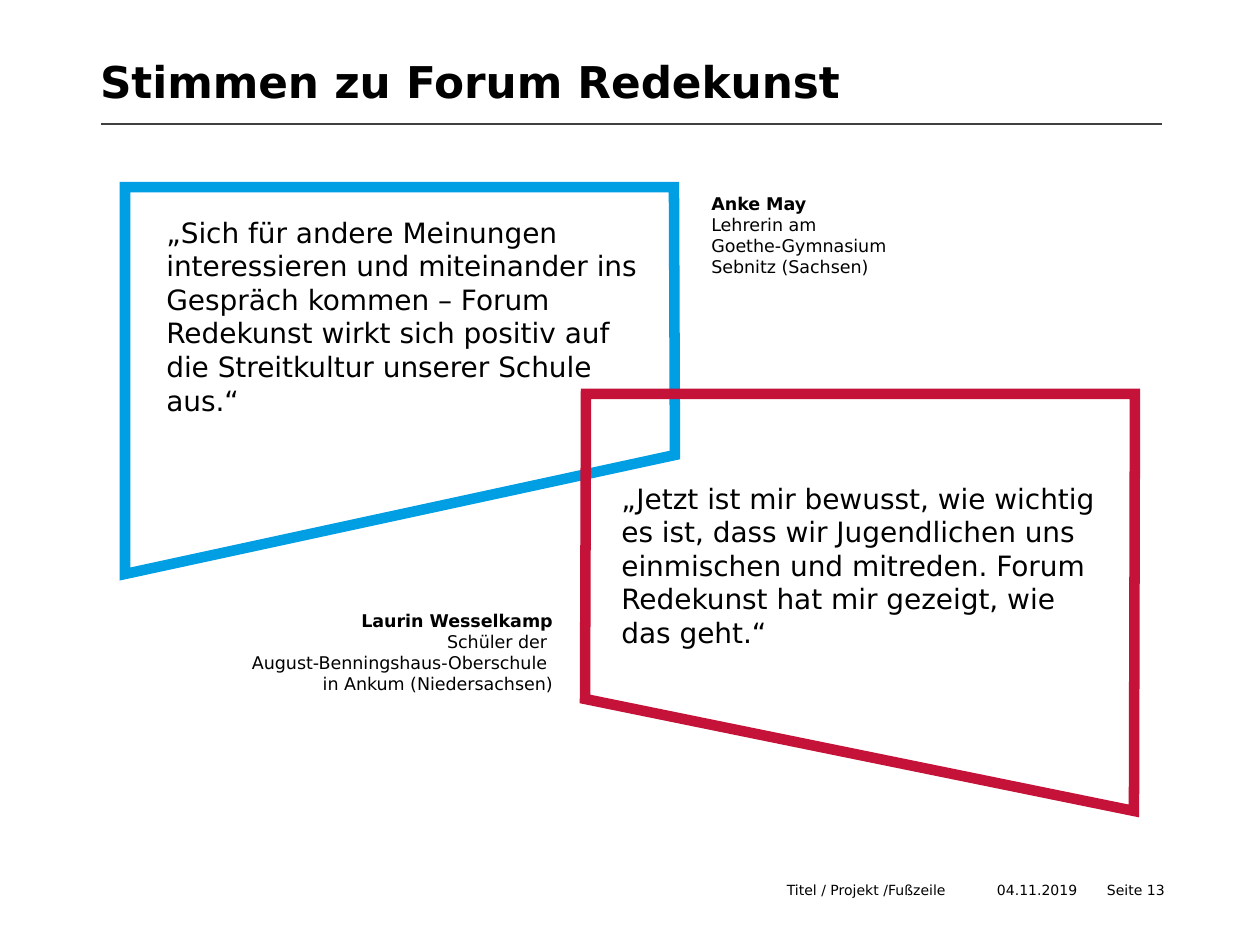
"""Build a slide with two quotations about Forum Redekunst in slanted frames."""
from lxml import etree
from pptx import Presentation
from pptx import util as u
from pptx.dml.color import RGBColor
from pptx.enum import shapes, text
from pptx.oxml.ns import qn

PX = u.Inches(1) / 126
FONT = "DejaVu Sans"
BLACK = RGBColor(0x00, 0x00, 0x00)
GREY = RGBColor(0x40, 0x40, 0x40)
BLUE = RGBColor(0x00, 0x9E, 0xE3)
RED = RGBColor(0xC4, 0x12, 0x39)
LEFT, RIGHT = text.PP_ALIGN.LEFT, text.PP_ALIGN.RIGHT

TITLE = "Stimmen zu Forum Redekunst"
TITLE_AREA = (100, 55, 1063, 79)
RULE = (101, 124, 1162, 124)

FRAMES = [
    (BLUE, [(125, 187), (674, 187), (675, 455), (125, 574)]),
    (RED, [(1135, 394), (586, 394), (585, 699), (1134, 811)]),
]
QUOTES = [
    ("„Sich für andere Meinungen interessieren und miteinander ins Gespräch "
     "kommen – Forum Redekunst wirkt sich positiv auf die Streitkultur "
     "unserer Schule aus.“", (154, 209, 507, 217)),
    ("„Jetzt ist mir bewusst, wie wichtig es ist, dass wir Jugendlichen uns "
     "einmischen und mitreden. Forum Redekunst hat mir gezeigt, wie das "
     "geht.“", (609, 475, 507, 183)),
]
SPEAKERS = [
    ("Laurin Wesselkamp",
     ["Schüler der ", "August-Benningshaus-Oberschule ", "in Ankum (Niedersachsen)"],
     (203, 604, 362, 97), RIGHT),
    ("Anke May",
     ["Lehrerin am ", "Goethe-Gymnasium", "Sebnitz (Sachsen)"],
     (699, 187, 350, 97), LEFT),
]
FOOTER = [
    ("Titel / Projekt /Fußzeile", (669, 882, 277, 50)),
    ("04.11.2019 ", (966, 882, 116, 50)),
    ("Seite 13", (1076, 882, 89, 50)),
]


def emu(lengths):
    return [round(length * PX) for length in lengths]


def clear_insets(frame):
    frame.margin_left = frame.margin_right = 0
    frame.margin_top = frame.margin_bottom = 0


def style(para, size, align=LEFT):
    para.alignment = align
    para.font.name = FONT
    para.font.size = u.Pt(size)
    para.font.color.rgb = BLACK


def add_text(slide, area, size, align=LEFT):
    box = slide.shapes.add_textbox(*emu(area))
    box.text_frame.word_wrap = True
    para = box.text_frame.paragraphs[0]
    style(para, size, align)
    return box.text_frame, para


def add_title(slide):
    title = slide.shapes.title
    title.left, title.top, title.width, title.height = emu(TITLE_AREA)
    frame = title.text_frame
    frame.text = TITLE
    frame.word_wrap = True
    frame.auto_size = text.MSO_AUTO_SIZE.NONE
    frame.vertical_anchor = text.MSO_ANCHOR.TOP
    clear_insets(frame)
    para = frame.paragraphs[0]
    style(para, 25)
    para.font.bold = True
    para.line_spacing = u.Pt(30)


def add_rule(slide):
    rule = slide.shapes.add_connector(shapes.MSO_CONNECTOR.STRAIGHT, *emu(RULE))
    rule.line.color.rgb = GREY
    rule.line.width = u.Pt(0.75)
    etree.SubElement(rule.element.spPr, qn("a:effectLst"))


def add_frame(slide, color, corners):
    builder = slide.shapes.build_freeform(*corners[0], scale=PX)
    builder.add_line_segments(corners[1:], close=True)
    outline = builder.convert_to_shape()
    outline.shadow.inherit = False
    outline.fill.background()
    outline.line.color.rgb = color
    outline.line.width = u.Pt(6)
    line = outline.element.spPr.find(qn("a:ln"))
    etree.SubElement(line, qn("a:miter"), lim="800000")


def add_speaker(slide, name, lines, area, align):
    para = add_text(slide, area, 10, align)[1]
    span = para.add_run()
    span.text = name
    span.font.bold = True
    for line in lines:
        para.add_line_break()
        para.add_run().text = line


def main():
    deck = Presentation()
    deck.slide_width, deck.slide_height = u.Inches(10), u.Inches(7.5)
    slide = deck.slides.add_slide(deck.slide_layouts[5])
    add_title(slide)
    add_rule(slide)
    for words, area in FOOTER:
        frame, para = add_text(slide, area, 8, RIGHT)
        clear_insets(frame)
        para.add_run().text = words
    for color, corners in FRAMES:
        add_frame(slide, color, corners)
    for words, area in QUOTES:
        add_text(slide, area, 16)[1].add_run().text = words
    for speaker in SPEAKERS:
        add_speaker(slide, *speaker)
    deck.save("out.pptx")


if __name__ == "__main__":
    main()
